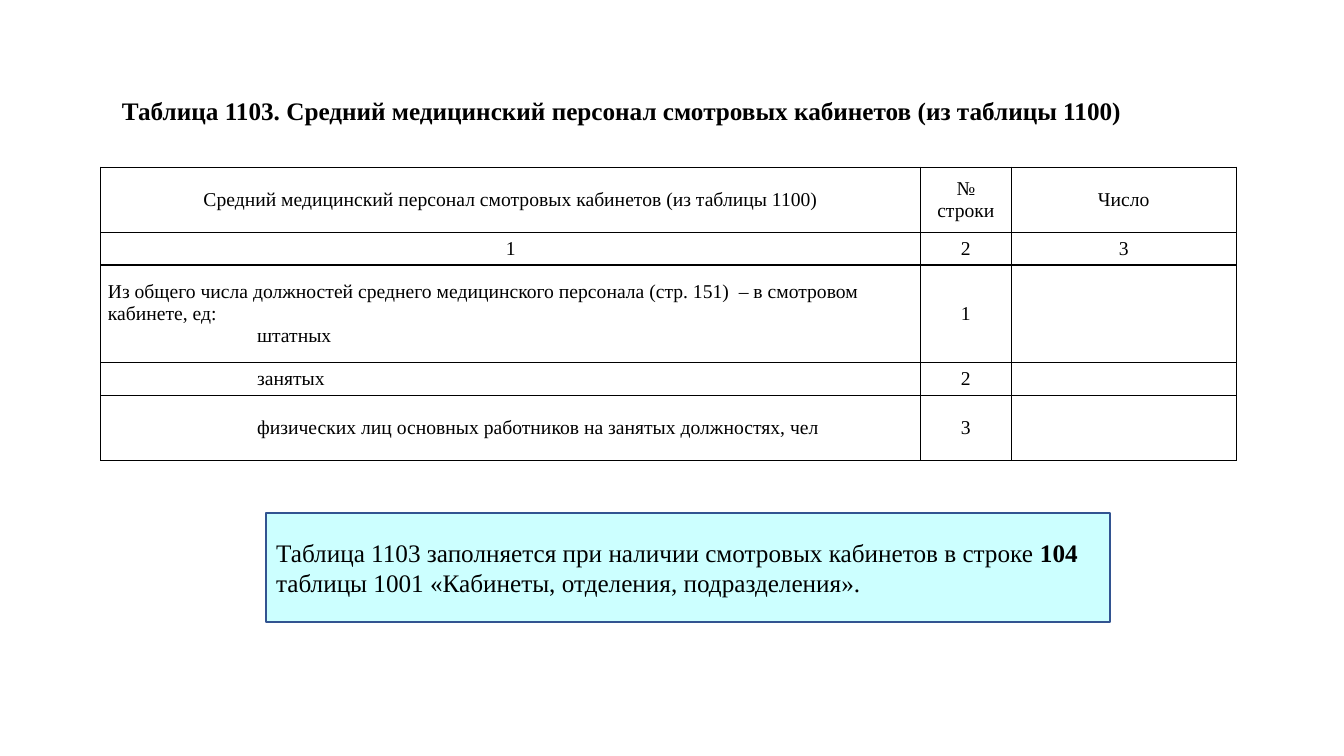
from lxml import etree
from pptx import Presentation
from pptx.dml.color import RGBColor
from pptx.enum.shapes import MSO_SHAPE
from pptx.enum.text import MSO_ANCHOR, PP_ALIGN
from pptx.oxml.ns import qn
from pptx.util import Inches, Pt

LEFT, CENTER = PP_ALIGN.LEFT, PP_ALIGN.CENTER
TOP, MIDDLE = MSO_ANCHOR.TOP, MSO_ANCHOR.MIDDLE
RECTANGLE = MSO_SHAPE.RECTANGLE

BLACK = RGBColor(0x00, 0x00, 0x00)
PALE_CYAN = RGBColor(0xCC, 0xFF, 0xFF)
NOTE_EDGE = RGBColor(0x32, 0x54, 0x91)

FONT = "Times New Roman"
SLIDE_WIDTH, SLIDE_HEIGHT = 13.33, 7.5
TABLE_LEFT, TABLE_TOP = 1, 1.66
COLUMN_WIDTHS = (8.13, 0.9, 2.23)
TABLE_WIDTH = sum(COLUMN_WIDTHS)
ROW_UNIT = 2.91 / 9
ROW_UNITS = (2, 1, 3, 1, 2)
INDENT = 1.48
CELL_MARGINS = {"margin_left": Inches(0.07), "margin_right": Inches(0.07),
                "margin_top": 0, "margin_bottom": 0}

TITLE = ("Таблица 1103. Средний медицинский персонал смотровых кабинетов "
         "(из таблицы 1100)")

# Each cell is a list of paragraphs: (text, alignment, indent in inches)
ROWS = [
    [[("Средний медицинский персонал смотровых кабинетов (из таблицы 1100)", CENTER, 0)],
     [("№", CENTER, 0), ("строки", CENTER, 0)],
     [("Число", CENTER, 0)]],
    [[(number, CENTER, 0)] for number in "123"],
    [[("Из общего числа должностей среднего медицинского персонала (стр. 151)  "
       "– в смотровом кабинете, ед:", LEFT, 0), ("штатных", LEFT, INDENT)],
     [("1", CENTER, 0)], []],
    [[("занятых", LEFT, INDENT)], [("2", CENTER, 0)], []],
    [[("физических лиц основных работников на занятых должностях, чел", LEFT, INDENT)],
     [("3", CENTER, 0)], []],
]

NOTE = [
    ("Таблица 1103 заполняется при наличии смотровых кабинетов в строке ", False),
    ("104 ", True),
    ("таблицы 1001 «Кабинеты, отделения, подразделения».", False),
]


def apply_format(target, values):
    for name, value in values.items():
        setattr(target, name, value)


def add_span(para, text, size, bold=False):
    span = para.add_run()
    span.text = text
    apply_format(span.font, {"name": FONT, "size": Pt(size), "bold": bold})
    span.font.color.rgb = BLACK


def set_borders(cell, width=1):
    properties = cell._tc.get_or_add_tcPr()
    for position, side in enumerate(("a:lnL", "a:lnR", "a:lnT", "a:lnB")):
        line = etree.Element(qn(side), w=str(Pt(width)))
        fill = etree.SubElement(line, qn("a:solidFill"))
        etree.SubElement(fill, qn("a:srgbClr"), val=str(BLACK))
        properties.insert(position, line)


def fill_cell(cell, paragraphs):
    apply_format(cell, {"vertical_anchor": MIDDLE, **CELL_MARGINS})
    cell.fill.background()
    set_borders(cell)
    frame = cell.text_frame
    for index, (text, alignment, indent) in enumerate(paragraphs):
        para = frame.add_paragraph() if index else frame.paragraphs[0]
        para.alignment = alignment
        if indent:
            para._p.get_or_add_pPr().set("marL", str(Inches(indent)))
        add_span(para, text, 14)


def format_title(page):
    title = page.shapes.title
    apply_format(title, {"left": Inches(1.11), "top": Inches(0.9),
                         "width": Inches(TABLE_WIDTH), "height": Inches(0.4)})
    apply_format(title.text_frame, {"word_wrap": True, "vertical_anchor": TOP})
    para = title.text_frame.paragraphs[0]
    para.alignment = LEFT
    add_span(para, TITLE, 18, bold=True)


def add_staff_table(page):
    frame = page.shapes.add_table(
        len(ROWS), len(COLUMN_WIDTHS), Inches(TABLE_LEFT), Inches(TABLE_TOP),
        Inches(TABLE_WIDTH), Inches(ROW_UNIT * sum(ROW_UNITS)))
    table = frame.table
    apply_format(table, {"first_row": False, "horz_banding": False})
    for column, width in zip(table.columns, COLUMN_WIDTHS):
        column.width = Inches(width)
    for row, units, contents in zip(table.rows, ROW_UNITS, ROWS):
        row.height = Inches(units * ROW_UNIT)
        for cell, paragraphs in zip(row.cells, contents):
            fill_cell(cell, paragraphs)


def add_note(page):
    box = page.shapes.add_shape(RECTANGLE, Inches(2.64), Inches(5.09),
                                Inches(8.37), Inches(1.08))
    box.shadow.inherit = False
    box.fill.solid()
    box.fill.fore_color.rgb = PALE_CYAN
    box.line.color.rgb = NOTE_EDGE
    box.line.width = Pt(1)
    apply_format(box.text_frame, {"word_wrap": True, "vertical_anchor": MIDDLE})
    para = box.text_frame.paragraphs[0]
    para.alignment = LEFT
    for text, bold in NOTE:
        add_span(para, text, 18, bold)


def main():
    deck = Presentation()
    apply_format(deck, {"slide_width": Inches(SLIDE_WIDTH),
                        "slide_height": Inches(SLIDE_HEIGHT)})
    page = deck.slides.add_slide(deck.slide_layouts.get_by_name("Title Only"))
    format_title(page)
    add_staff_table(page)
    add_note(page)
    deck.save("out.pptx")


if __name__ == "__main__":
    main()
